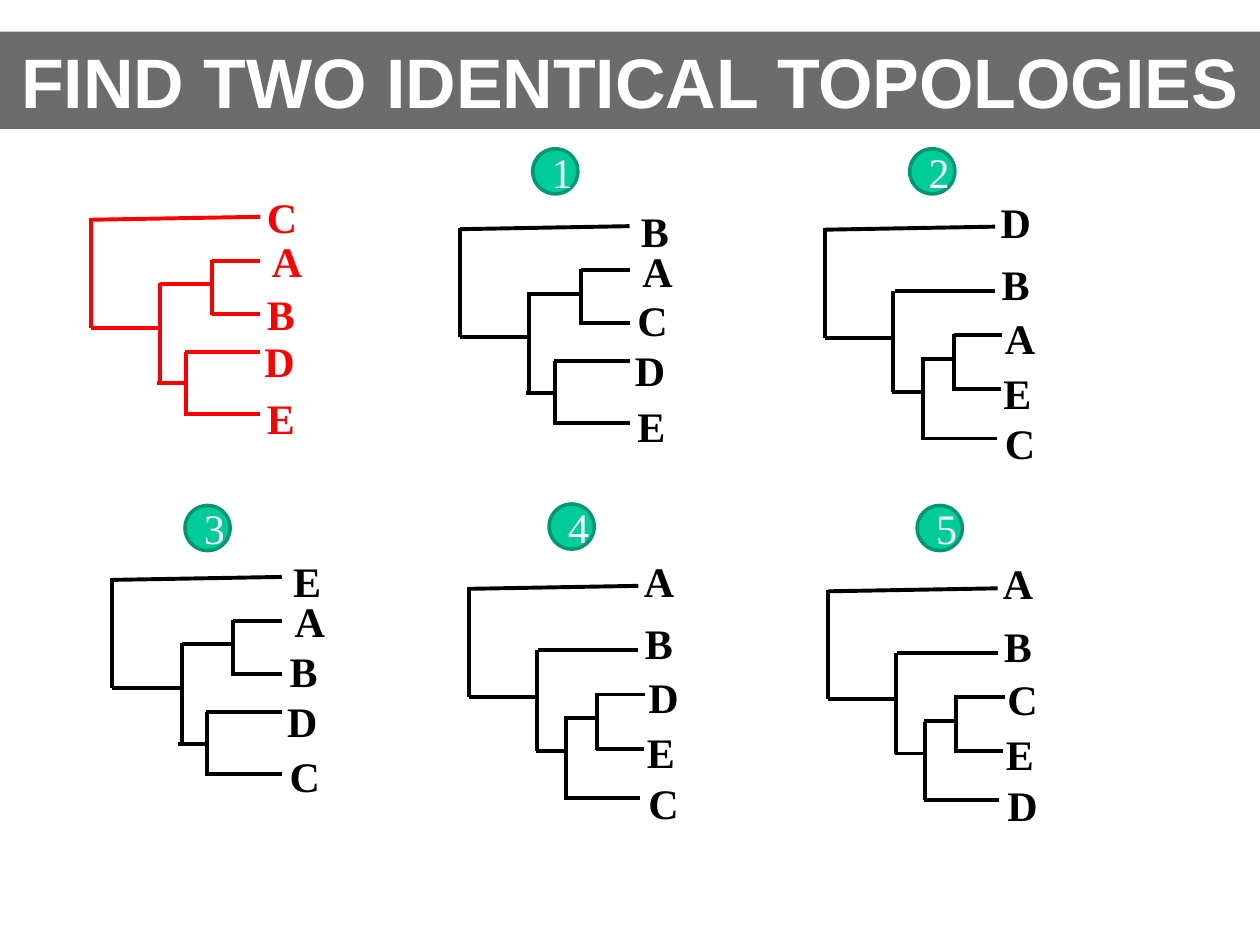
from lxml import etree
from pptx import Presentation
from pptx.dml.color import RGBColor
from pptx.enum.shapes import MSO_CONNECTOR, MSO_SHAPE
from pptx.enum.text import MSO_ANCHOR, PP_ALIGN
from pptx.oxml.ns import qn
from pptx.util import Cm, Pt

LINE = MSO_CONNECTOR.STRAIGHT
RECT, OVAL = MSO_SHAPE.RECTANGLE, MSO_SHAPE.OVAL
TOP, MIDDLE = MSO_ANCHOR.TOP, MSO_ANCHOR.MIDDLE
LEFT, CENTER = PP_ALIGN.LEFT, PP_ALIGN.CENTER

RED = RGBColor(0xFF, 0x00, 0x00)
BLACK = RGBColor(0x00, 0x00, 0x00)
WHITE = RGBColor(0xFF, 0xFF, 0xFF)
GRAY = RGBColor(0x40, 0x40, 0x40)
GREEN = RGBColor(0x00, 0xCC, 0x99)
RIM = RGBColor(0x00, 0x97, 0x71)

TITLE = {"name": "Arial", "size": Pt(40), "bold": True}
TIP = {"name": "Times New Roman", "size": Pt(24), "bold": True}
NUMBER = {"name": "Times New Roman", "size": Pt(24), "bold": False}

STEM = [(0, 0, 0, 2.21), (0, 0.03, 3.42, -0.03), (0, 2.21, 1.4, 2.21)]
FORK = STEM + [
    (1.4, 1.3, 1.4, 3.33), (2.44, 0.84, 2.44, 1.96), (2.44, 1.33, 1.4, 1.33),
    (2.44, 0.86, 3.42, 0.86), (2.44, 1.93, 3.42, 1.93),
    (1.92, 3.33, 1.33, 3.33), (1.92, 2.69, 1.92, 3.98),
    (1.9, 2.69, 3.42, 2.69), (1.9, 3.94, 3.42, 3.94),
]
LADDER = STEM + [
    (1.37, 1.27, 1.37, 3.3), (1.4, 1.27, 3.42, 1.27), (1.93, 3.3, 1.35, 3.3),
    (1.96, 2.67, 1.96, 4.24), (1.93, 4.24, 3.45, 4.24),
    (2.59, 2.64, 1.93, 2.64), (2.59, 2.13, 2.59, 3.28),
    (2.59, 2.16, 3.56, 2.16), (2.57, 3.25, 3.53, 3.25),
]
MODEL_TIPS = [(3.3, -0.66), (3.4, 0.23), (3.3, 1.3), (3.25, 2.24), (3.3, 3.38)]
FORK_TIPS = [(3.4, -0.58), (3.43, 0.23), (3.33, 1.22), (3.28, 2.24), (3.33, 3.35)]
LADDER_TIPS = [(3.28, -0.77), (3.3, 0.49), (3.37, 1.57), (3.34, 2.68), (3.37, 3.7)]

TREES = [
    (1.83, 4.4, FORK, MODEL_TIPS, "CABDE", RED),
    (9.27, 4.59, FORK, FORK_TIPS, "BACDE", BLACK),
    (16.64, 4.6, LADDER, LADDER_TIPS, "DBAEC", BLACK),
    (2.26, 11.66, FORK, FORK_TIPS, "EABDC", BLACK),
    (9.45, 11.84, LADDER, LADDER_TIPS, "ABDEC", BLACK),
    (16.69, 11.89, LADDER, LADDER_TIPS, "ABCED", BLACK),
]
BADGES = [(10.74, 3), (18.34, 3), (3.73, 10.19), (11.07, 10.16), (18.49, 10.19)]


class Board:
    def __init__(self, slide):
        self.shapes = slide.shapes
        self.stroke = Pt(2.25)

    def letter(self, shape, text, style, color, align=CENTER, anchor=MIDDLE):
        frame = shape.text_frame
        frame.word_wrap = True
        frame.vertical_anchor = anchor
        para = frame.paragraphs[0]
        para.alignment = align
        run = para.add_run()
        run.text = text
        for key, value in style.items():
            setattr(run.font, key, value)
        run.font.color.rgb = color

    def branch(self, ends, color):
        line = self.shapes.add_connector(LINE, *map(Cm, ends))
        line.line.color.rgb = color
        line.line.width = self.stroke
        etree.SubElement(line._element.spPr, qn("a:effectLst"))

    def label(self, x, y, text, color):
        box = self.shapes.add_textbox(Cm(x), Cm(y), Cm(1.14), Cm(1.29))
        self.letter(box, text, TIP, color, LEFT, TOP)

    def tree(self, x, y, lines, tips, names, color):
        for x1, y1, x2, y2 in lines:
            self.branch((x + x1, y + y1, x + x2, y + y2), color)
        for (dx, dy), name in zip(tips, names):
            self.label(x + dx, y + dy, name, color)

    def solid(self, kind, box, fill):
        shape = self.shapes.add_shape(kind, *map(Cm, box))
        shape.shadow.inherit = False
        shape.fill.solid()
        shape.fill.fore_color.rgb = fill
        return shape

    def banner(self, text):
        bar = self.solid(RECT, (0, 0.64, 25.4, 1.96), GRAY)
        bar.line.fill.background()
        tint = bar._element.spPr.find(".//" + qn("a:srgbClr"))
        etree.SubElement(tint, qn("a:alpha"), val="77000")
        self.letter(bar, text, TITLE, WHITE)

    def badge(self, x, y, text):
        disc = self.solid(OVAL, (x, y, 0.91, 0.91), GREEN)
        disc.line.color.rgb = RIM
        disc.line.width = Pt(2)
        self.letter(disc, text, NUMBER, WHITE)


def main():
    deck = Presentation()
    deck.slide_width, deck.slide_height = Cm(25.4), Cm(19.05)
    board = Board(deck.slides.add_slide(deck.slide_layouts[6]))
    for tree in TREES:
        board.tree(*tree)
    board.banner("FIND TWO IDENTICAL TOPOLOGIES")
    for count, (x, y) in enumerate(BADGES, 1):
        board.badge(x, y, str(count))
    deck.save("out.pptx")


if __name__ == "__main__":
    main()
